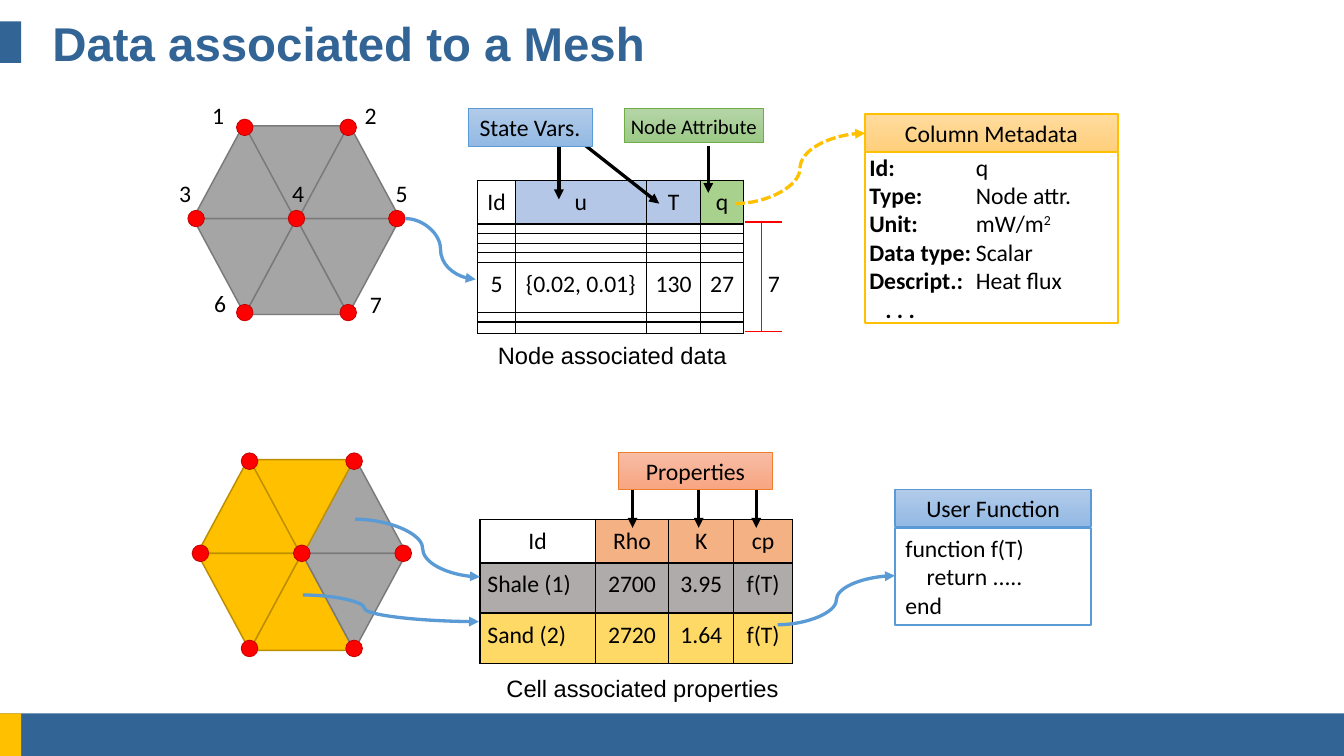
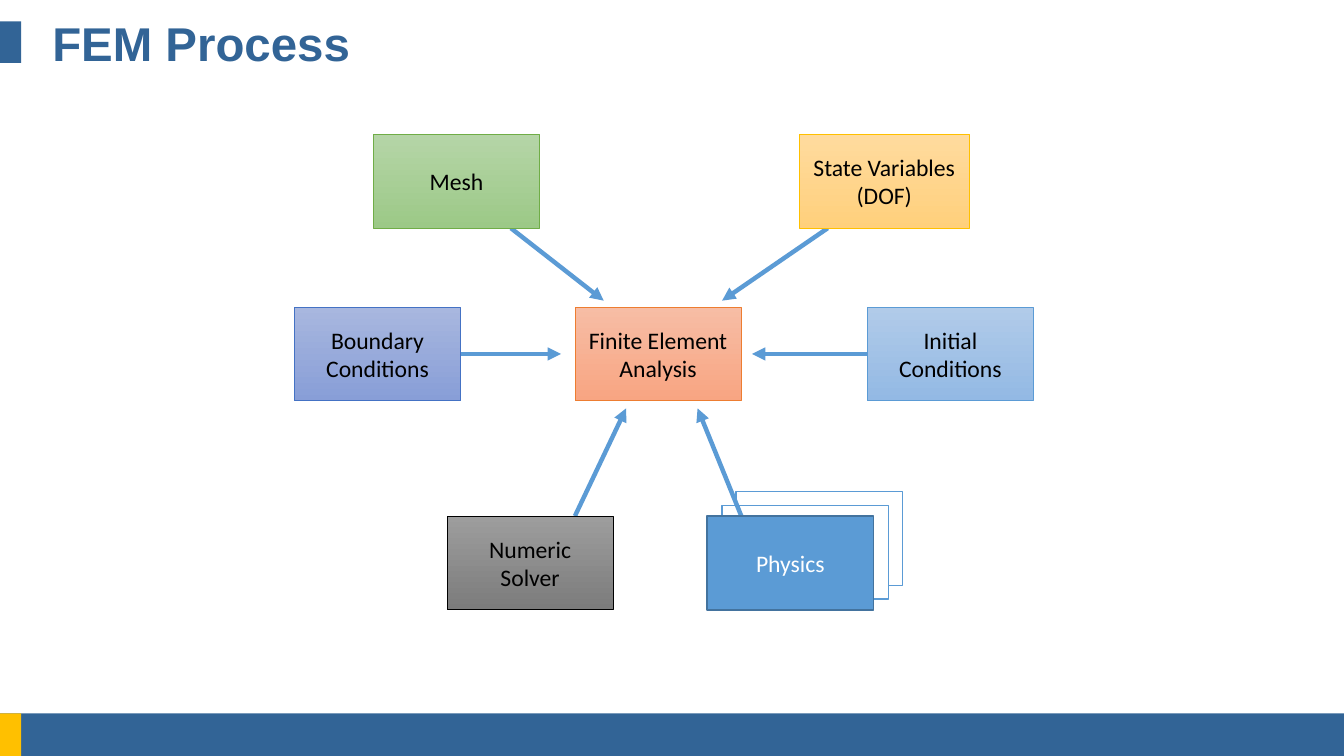
import pptx
import pptx.util
import pptx.dml.color
import pptx.enum.dml
import pptx.enum.shapes
import pptx.enum.text
import pptx.oxml
import pptx.oxml.ns
import lxml.etree

WIDE, HIGH = 126, 70.9
NAVY, GOLD, BLUE, RED = "326496", "FFC000", "5B9BD5", "FF0000"
BLACK, WHITE, GREY = "000000", "FFFFFF", "A5A5A5"
SKY = ("B1CBE9", "93B9E4")
LEAF = ("B5D5A7", "9CC987")
SUN = ("FFDB9E", "FFD07C")
ROSE = ("F7BDA5", "F8A582")
IRIS = ("A8B7DF", "889ED7")
STONE = ("9D9D9D", "7C7C7C")
EDGES = {SKY: BLUE, LEAF: "70AD47", SUN: GOLD, ROSE: "ED7D31",
         IRIS: "4472C4", STONE: BLACK, GREY: "7A7A7A", GOLD: "BD8E00"}
KIND = pptx.enum.shapes.MSO_SHAPE
LINK = pptx.enum.shapes.MSO_CONNECTOR
ALIGN = pptx.enum.text.PP_ALIGN
MIDDLE = pptx.enum.text.MSO_ANCHOR.MIDDLE


def unit(count):
    return pptx.util.Inches(count / 10)


def place(*counts):
    return [unit(count) for count in counts]


def tint(code):
    return pptx.dml.color.RGBColor.from_string(code)


def add(parent, tag, **marks):
    return lxml.etree.SubElement(parent, pptx.oxml.ns.qn(tag), marks)


def ink(run, size=16, color=BLACK, face="Calibri", bold=False):
    font = run.font
    font.size = pptx.util.Pt(size)
    font.name = face
    font.bold = bold
    font.color.rgb = tint(color)


def write(frame, text, align=ALIGN.LEFT, **style):
    frame.text = text
    for para in frame.paragraphs:
        para.alignment = align
        for run in para.runs:
            ink(run, **style)


def pad(frame, side, end):
    frame.margin_left = frame.margin_right = unit(side)
    frame.margin_top = frame.margin_bottom = unit(end)


def paint(fill, color):
    if isinstance(color, tuple):
        fill.gradient()
        fill.gradient_angle = 270
        for stop, code in zip(fill.gradient_stops, color):
            stop.color.rgb = tint(code)
    else:
        fill.solid()
        fill.fore_color.rgb = tint(color)


def draw(slide, spot, fill, edge=None, width=1, kind=KIND.RECTANGLE):
    shape = slide.shapes.add_shape(kind, *place(*spot))
    shape.shadow.inherit = False
    paint(shape.fill, fill)
    if edge:
        shape.line.color.rgb = tint(edge)
        shape.line.width = pptx.util.Pt(width)
    else:
        shape.line.fill.background()
    return shape


def box(slide, spot, fill, text, width=0.5, **style):
    shape = draw(slide, spot, fill, EDGES[fill], width)
    write(shape.text_frame, text, ALIGN.CENTER, **style)
    return shape


def tag(slide, spot, fill, text, width=0.5, size=16):
    shape = box(slide, spot, fill, text, width, size=size)
    pad(shape.text_frame, 0.4, 0.4)


def note(slide, spot, text, face="Calibri"):
    frame = slide.shapes.add_textbox(*place(*spot)).text_frame
    frame.word_wrap = False
    write(frame, text, face=face)


def link(slide, ends, color=BLACK, width=2.25, head=True,
         bend=None, dash=False):
    kind = LINK.STRAIGHT if bend is None else LINK.CURVE
    wire = slide.shapes.add_connector(kind, *place(*ends))
    wire.line.color.rgb = tint(color)
    wire.line.width = pptx.util.Pt(width)
    if dash:
        wire.line.dash_style = pptx.enum.dml.MSO_LINE.SQUARE_DOT
    props = wire.element.spPr
    if head:
        add(props.find(pptx.oxml.ns.qn("a:ln")), "a:tailEnd", type="triangle")
    if bend is not None:
        guides = props.find(".//" + pptx.oxml.ns.qn("a:avLst"))
        add(guides, "a:gd", name="adj1", fmla=f"val {round(bend * 100000)}")
    add(props, "a:effectLst")


def fence(cell):
    props = cell._tc.get_or_add_tcPr()
    for spot, side in enumerate(("a:lnL", "a:lnR", "a:lnT", "a:lnB")):
        line = add(props, side, w="12700")
        add(add(line, "a:solidFill"), "a:srgbClr", val=BLACK)
        props.insert(spot, line)


def grid(slide, spot, wides, highs, rows, shade, align):
    shape = slide.shapes.add_table(
        len(highs), len(wides), *place(*spot, sum(wides), sum(highs)))
    table = shape.table
    table.first_row = table.horz_banding = False
    for col, wide in zip(table.columns, wides):
        col.width = unit(wide)
    for y, high in enumerate(highs):
        table.rows[y].height = unit(high)
        for x in range(len(wides)):
            cell = table.cell(y, x)
            paint(cell.fill, shade(y, x))
            fence(cell)
            if y in rows:
                pad(cell, 0.7, 0.7)
                write(cell.text_frame, rows[y][x], align(y, x))
            else:
                pad(cell, 0, 0)
                add(cell.text_frame.paragraphs[0]._p, "a:endParaRPr", sz="100")


def mesh(slide, left, top, wide, high, shades):
    slots = [(x, y) for x in range(3) for y in range(2)]
    for x, y in sorted(slots, key=lambda slot: sum(slot) % 2):
        drop = 0.3 if (x, y) == (1, 0) else 0
        spot = (left + x * wide / 2, top + y * high + drop, wide, high)
        part = draw(slide, spot, shades[x], EDGES[shades[x]],
                    kind=KIND.ISOSCELES_TRIANGLE)
        part.rotation = 180 * ((x + y) % 2)
    size = wide * 0.16
    for y, row in ((0.05, (0.5, 1.5)), (1, (0.03, 1, 1.97)),
                   (1.98, (0.5, 1.5))):
        for x in row:
            spot = (left + x * wide - size / 2, top + y * high - size / 2,
                    size, size)
            draw(slide, spot, RED, "C00000", 0.5, KIND.OVAL)


def brand(layout, slide):
    title = layout.placeholders[0]
    title.left, title.top, title.width, title.height = place(3.9, 2, 118.1, 3.9)
    bands = (((0, 66.9, WIDE, HIGH - 66.9), NAVY),
             ((0, 66.9, 2, HIGH - 66.9), GOLD), ((0, 2, 2, 3.9), NAVY))
    for step, (spot, color) in enumerate(bands):
        band = draw(slide, spot, color)
        layout.shapes.element.insert(2 + step, band.element)


def head(slide, text):
    frame = slide.shapes.title.text_frame
    write(frame, text, size=32, color=NAVY, face="Arial", bold=True)
    frame.vertical_anchor = MIDDLE
    frame.auto_size = pptx.enum.text.MSO_AUTO_SIZE.NONE


def facts(slide):
    tag(slide, (81.1, 10.7, 23.7, 3.5), SUN, "Column Metadata", 1)
    frame = draw(slide, (81.1, 14.3, 23.7, 16), WHITE, GOLD).text_frame
    pad(frame, 0.4, 0.5)
    write(frame, "Id:\t\nType:\t\nUnit:\t\nData type:\t\nDescript.:\t\n. . .",
          bold=True)
    values = (("q",), ("Node attr.",), ("mW/m", "2"), ("Scalar",),
              ("Heat flux",), ())
    for para, parts in zip(frame.paragraphs, values):
        props = para._p.get_or_add_pPr()
        if not parts:
            props.set("marL", str(unit(1.5)))
            continue
        add(add(props, "a:tabLst"), "a:tab", pos=str(unit(10)), algn="l")
        for step, part in enumerate(parts):
            run = para.add_run()
            run.text = part
            ink(run)
            if step:
                run.font._element.set("baseline", "30000")


def nodes(slide):
    hues = (WHITE, "B4C7E7", "B4C7E7", "A9D18E")
    grid(slide, (44.8, 16.9), (3.5, 12.3, 5.1, 4),
         (4, 0.9, 0.9, 0.9, 0.9, 4.7, 0.9, 1.1),
         {0: ("Id", "u", "T", "q"), 5: ("5", "{0.02, 0.01}", "130", "27")},
         lambda y, x: WHITE if y else hues[x], lambda y, x: ALIGN.CENTER)
    mesh(slide, 18.1, 11.5, 9.7, 9, (GREY,) * 3)
    spots = ((18.9, 9), (33.2, 9), (15.8, 16.3), (26.4, 16.3), (36.1, 16.3),
             (19.1, 26.6), (33.7, 26.7))
    for count, spot in enumerate(spots, 1):
        note(slide, (*spot, 3.2, 3.7), str(count))
    link(slide, (38, 20.5, 44.6, 26.2), BLUE, bend=0.5)
    for ends in ((66.4, 13.7, 66.4, 18.1), (52.4, 13.4, 52.4, 18.7),
                 (54.7, 13.5, 61.8, 19.1)):
        link(slide, ends)
    tag(slide, (43.9, 10.2, 11.6, 3.5), SKY, "State Vars.")
    tag(slide, (58.5, 10.2, 13.1, 3.2), LEAF, "Node Attribute", size=14)
    for ends in ((69.8, 20.8, 73.3, 20.8), (71.4, 20.8, 71.4, 31.1),
                 (69.8, 31.1, 73.3, 31.1)):
        link(slide, ends, RED, 1, head=False)
    note(slide, (71, 24.7, 3.2, 3.7), "7")
    facts(slide)
    link(slide, (68.9, 19.1, 81.1, 12.5), GOLD, bend=0.5, dash=True)
    note(slide, (45.7, 31.5, 23.7, 3.7), "Node associated data", "Arial")


def cells(slide):
    hues = ("F4B183", "AFABAB", "FFD966")
    rows = (("Id", "Rho", "K", "cp"), ("Shale (1)", "2700", "3.95", "f(T)"),
            ("Sand (2)", "2720", "1.64", "f(T)"))
    grid(slide, (45, 48.7), (10.8, 6.9, 6.1, 5.5), (4.1, 4.7, 4.7),
         dict(enumerate(rows)),
         lambda y, x: hues[y] if x or y else WHITE,
         lambda y, x: ALIGN.LEFT if y and not x else ALIGN.CENTER)
    mesh(slide, 18.5, 42.8, 9.8, 9.1, (GOLD, GOLD, GREY))
    for x in (59.3, 65.5, 70.9):
        link(slide, (x, 45.9, x, 49.5))
    link(slide, (33.3, 48.7, 45, 54.1), BLUE, bend=0.54)
    link(slide, (28.4, 55.8, 44.9, 58.3), BLUE, bend=0.35)
    tag(slide, (58, 42.4, 14.4, 3.5), ROSE, "Properties")
    tag(slide, (83.9, 45.9, 18.4, 3.5), SKY, "User Function", 1)
    body = draw(slide, (83.9, 49.5, 18.4, 9.1), WHITE, BLUE)
    write(body.text_frame, "function f(T)\n    return .....\nend")
    link(slide, (72.9, 58.6, 83.9, 54), BLUE, bend=0.5)
    note(slide, (46.5, 62.7, 27.8, 3.7), "Cell associated properties", "Arial")


def process(slide):
    wide, high = 15.6, 8.8
    for spot in ((69, 46.1), (67.7, 47.4)):
        draw(slide, (*spot, wide, high), WHITE, BLUE)
    for ends in ((81.3, 33.2, 70.5, 33.2), (43.1, 33.2, 52.6, 33.2),
                 (77.6, 21.4, 67.7, 28.2), (47.9, 21.4, 56.6, 28.2),
                 (53.9, 48.4, 58.7, 38.3), (69.5, 48.4, 65.4, 38.3)):
        link(slide, ends, BLUE, 3)
    for x, y, fill, text in (
            (35, 12.6, LEAF, "Mesh"),
            (27.6, 28.8, IRIS, "Boundary Conditions"),
            (53.9, 28.8, ROSE, "Finite Element Analysis"),
            (81.3, 28.8, SKY, "Initial Conditions"),
            (41.9, 48.4, STONE, "Numeric Solver")):
        box(slide, (x, y, wide, high), fill, text)
    box(slide, (74.9, 12.6, 16, high), SUN, "State Variables (DOF)")
    core = draw(slide, (66.3, 48.4, wide, high), BLUE, "43739E")
    write(core.text_frame, "Physics", ALIGN.CENTER, color=WHITE)


def main():
    deck = pptx.Presentation()
    deck.slide_width, deck.slide_height = place(WIDE, HIGH)
    layout = deck.slide_layouts[5]
    data, flow = [deck.slides.add_slide(layout) for _ in range(2)]
    brand(layout, data)
    head(data, "Data associated to a Mesh")
    nodes(data)
    cells(data)
    head(flow, "FEM Process")
    process(flow)
    deck.save("out.pptx")


if __name__ == "__main__":
    main()
